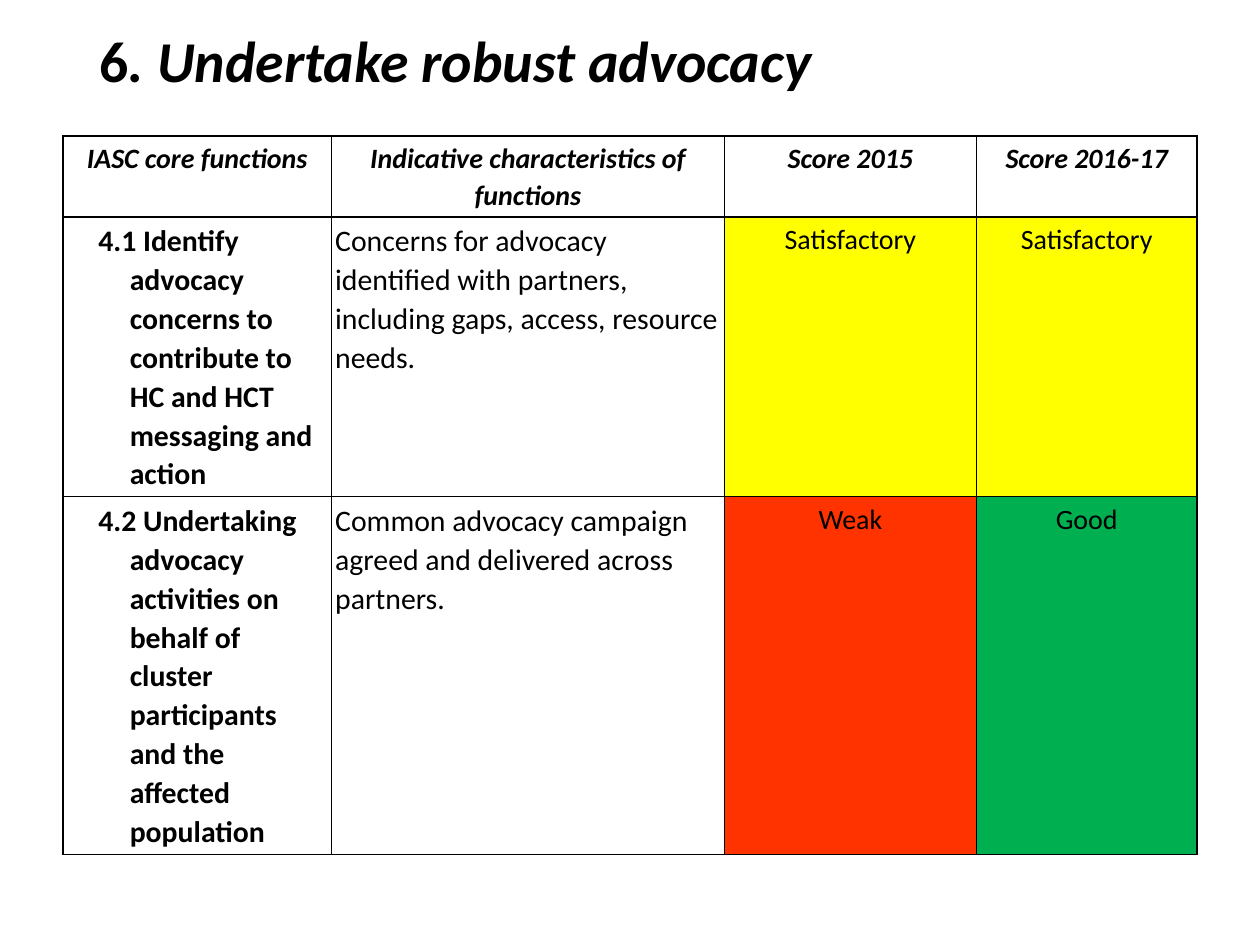
import pptx
import pptx.util
import pptx.dml.color
import pptx.enum.text
import pptx.oxml
import pptx.oxml.ns

COLS, ROWS = 100, 75
ALIGN = pptx.enum.text.PP_ALIGN
ANCHOR = pptx.enum.text.MSO_ANCHOR


def paint(code):
    return pptx.dml.color.RGBColor.from_string(code)


def write(frame, text, size=16, bold=False, tilt=False, align=ALIGN.LEFT,
          space=1.07, hang=None):
    frame.word_wrap = True
    para = frame.paragraphs[0]
    para.alignment = align
    para.line_spacing = space
    if hang:
        props = para._p.get_or_add_pPr()
        props.set("marL", str(pptx.util.Inches(hang[0])))
        props.set("indent", str(pptx.util.Inches(hang[1])))
    for part, slant in text if isinstance(text, list) else [(text, tilt)]:
        run = para.add_run()
        run.text = part
        font = run.font
        font.name = "Calibri"
        font.size = pptx.util.Pt(size)
        font.bold = bold
        font.italic = slant
        font.color.rgb = paint("000000")


class Deck:
    def __init__(self):
        self.show = pptx.Presentation()
        self.show.slide_width = pptx.util.Inches(10)
        self.show.slide_height = pptx.util.Inches(7.5)
        self.slide = self.show.slides.add_slide(self.show.slide_layouts[5])

    def wide(self, cols):
        return round(self.show.slide_width * cols / COLS)

    def high(self, rows):
        return round(self.show.slide_height * rows / ROWS)

    def title(self, left, top, width, height, text, **style):
        shape = self.slide.shapes.title
        shape.left, shape.top = self.wide(left), self.high(top)
        shape.width, shape.height = self.wide(width), self.high(height)
        frame = shape.text_frame
        frame.auto_size = pptx.enum.text.MSO_AUTO_SIZE.NONE
        frame.vertical_anchor = ANCHOR.MIDDLE
        write(frame, text, **style)

    def edge(self, cell):
        props = cell._tc.get_or_add_tcPr()
        for spot, side in enumerate(("lnL", "lnR", "lnT", "lnB")):
            line = pptx.oxml.parse_xml(
                f'<a:{side} {pptx.oxml.ns.nsdecls("a")} w="{pptx.util.Pt(1)}">'
                f'<a:solidFill><a:srgbClr val="000000"/></a:solidFill></a:{side}>')
            props.insert(spot, line)

    def cell(self, cell, text, fill=None, **style):
        pad = pptx.util.Inches(0.03)
        cell.margin_left = cell.margin_right = pad
        cell.margin_top = cell.margin_bottom = pad
        cell.vertical_anchor = ANCHOR.TOP
        if fill:
            cell.fill.solid()
            cell.fill.fore_color.rgb = paint(fill)
        else:
            cell.fill.background()
        self.edge(cell)
        write(cell.text_frame, text, **style)

    def table(self, left, top, widths, heights):
        grid = self.slide.shapes.add_table(
            len(heights), len(widths), self.wide(left), self.high(top),
            self.wide(sum(widths)), self.high(sum(heights))).table
        grid.horz_banding = False
        for col, width in zip(grid.columns, widths):
            col.width = self.wide(width)
        for row, height in zip(grid.rows, heights):
            row.height = self.high(height)
        return grid


HEADS = ["IASC core functions", "Indicative characteristics of functions",
         "Score 2015", "Score 2016-17"]
TASKS = [
    ("4.1 Identify advocacy concerns to contribute to HC and HCT messaging and action",
     "Concerns for advocacy identified with partners, including gaps, access, "
     "resource needs.", "Satisfactory", "Satisfactory"),
    ("4.2 Undertaking advocacy activities on behalf of cluster participants "
     "and the affected population",
     "Common advocacy campaign agreed and delivered across partners.",
     "Weak", "Good"),
]
FILLS = {"Satisfactory": "FFFF00", "Weak": "FF3300", "Good": "00B050"}


def main():
    deck = Deck()
    deck.title(6.9, 1.7, 86.2, 6.7,
               [("6", False), (". Undertake robust advocacy", True)],
               size=33, bold=True, space=0.9)
    grid = deck.table(5, 10.8, [21.3, 31.2, 20, 17.5], [6.4, 22.1, 28.3])
    for col, head in enumerate(HEADS):
        deck.cell(grid.cell(0, col), head, bold=True, tilt=True,
                  align=ALIGN.CENTER)
    for row, (task, trait, *scores) in enumerate(TASKS, 1):
        deck.cell(grid.cell(row, 0), task, size=17, bold=True,
                  hang=(0.5, -0.25))
        deck.cell(grid.cell(row, 1), trait, size=17)
        for col, score in enumerate(scores, 2):
            deck.cell(grid.cell(row, col), score, fill=FILLS[score],
                      align=ALIGN.CENTER)
    deck.show.save("out.pptx")


if __name__ == "__main__":
    main()
